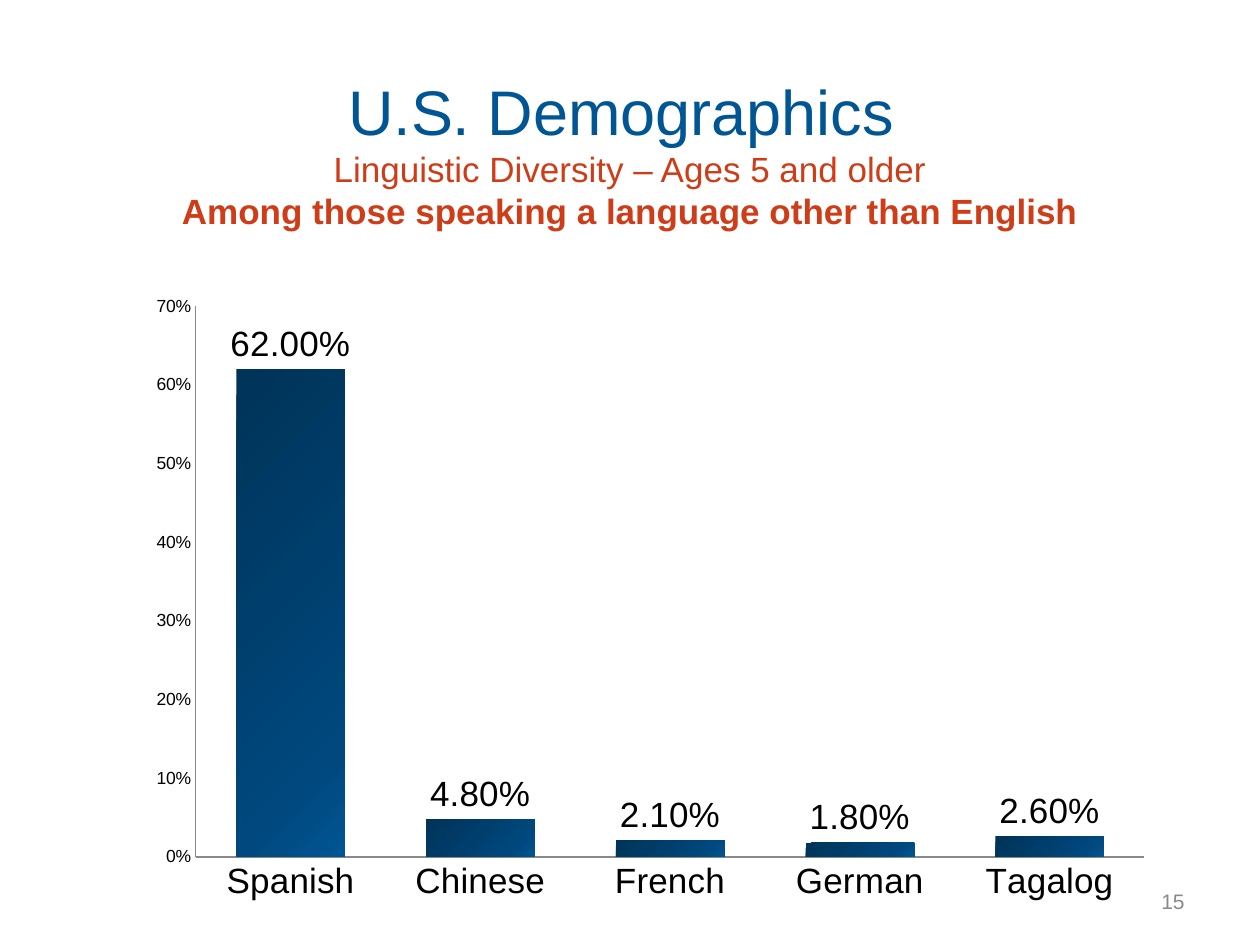
from copy import deepcopy

from pptx import Presentation
from pptx.chart.data import CategoryChartData
from pptx.dml.color import RGBColor
from pptx.enum.chart import XL_CHART_TYPE, XL_LABEL_POSITION, XL_TICK_MARK
from pptx.enum.text import MSO_ANCHOR, PP_ALIGN
from pptx.oxml.ns import qn
from pptx.util import Pt

COLUMN = XL_CHART_TYPE.COLUMN_CLUSTERED
ABOVE = XL_LABEL_POSITION.OUTSIDE_END
NO_TICK = XL_TICK_MARK.NONE
MIDDLE = MSO_ANCHOR.MIDDLE
CENTER, RIGHT = PP_ALIGN.CENTER, PP_ALIGN.RIGHT

BLACK = RGBColor(0x00, 0x00, 0x00)
BLUE = RGBColor(0x00, 0x56, 0x95)
MID = RGBColor(0x00, 0x48, 0x7E)
NAVY = RGBColor(0x00, 0x33, 0x58)
RED = RGBColor(0xCE, 0x3C, 0x18)
GRAY = RGBColor(0x89, 0x89, 0x89)

SCALE = 914400 / 126
SHADES = [(0, NAVY), (0.82, MID), (1, BLUE)]
SHARES = {
    "Spanish": 0.62,
    "Chinese": 0.048,
    "French": 0.021,
    "German": 0.018,
    "Tagalog": 0.026,
}


def emu(*lengths):
    return [round(n * SCALE) for n in lengths]


class Deck:
    face = "Arial"

    def __init__(self, width, height):
        self.show = Presentation()
        self.show.slide_width, self.show.slide_height = emu(width, height)
        self.slide = self.show.slides.add_slide(self.show.slide_layouts[6])

    def style(self, font, size, color, bold=False):
        font.name, font.size, font.bold = self.face, Pt(size), bold
        font.color.rgb = color

    def text(self, box, lines, align):
        """Each line is (words, size, color, bold)."""
        frame = self.slide.shapes.add_textbox(*emu(*box)).text_frame
        frame.word_wrap = True
        frame.vertical_anchor = MIDDLE
        para = frame.paragraphs[0]
        para.alignment = align
        for i, (words, *look) in enumerate(lines):
            if i:
                para.add_line_break()
            run = para.add_run()
            run.text = words
            self.style(run.font, *look)

    def shade(self, series, stops):
        """Fill with a gradient from top left to bottom right."""
        fill = series.format.fill
        fill.gradient()
        fill.gradient_angle = 315
        row = series._element.find(".//" + qn("a:gsLst"))
        while len(row) < len(stops):
            row.append(deepcopy(row[-1]))
        for stop, (place, color) in zip(fill.gradient_stops, stops):
            stop.position = place
            stop.color.rgb = color

    def axis(self, axis, size):
        axis.has_major_gridlines = False
        axis.major_tick_mark = axis.minor_tick_mark = NO_TICK
        axis.format.line.color.rgb = GRAY
        axis.format.line.width = Pt(0.75)
        self.style(axis.tick_labels.font, size, BLACK)

    def columns(self, box, shares):
        data = CategoryChartData(number_format="0.00%")
        data.categories = list(shares)
        data.add_series("Series 1", list(shares.values()))
        chart = self.slide.shapes.add_chart(COLUMN, *emu(*box), data).chart
        chart.has_legend = chart.has_title = False
        self.style(chart.font, 10, BLACK)
        self.axis(chart.category_axis, 20)
        self.axis(chart.value_axis, 10)
        scale = chart.value_axis
        scale.minimum_scale, scale.maximum_scale, scale.major_unit = 0, 0.7, 0.1
        scale.tick_labels.number_format = "0%"
        scale.tick_labels.number_format_is_linked = False
        plot = chart.plots[0]
        plot.gap_width = 75
        plot.vary_by_categories = False
        self.shade(plot.series[0], SHADES)
        labels = plot.series[0].data_labels
        labels.show_value = True
        labels.position = ABOVE
        labels.number_format = "0.00%"
        labels.number_format_is_linked = False
        self.style(labels.font, 20, BLACK)


def main():
    deck = Deck(1260, 945)
    title = [
        ("U.S. Demographics ", 36, BLUE),
        ("Linguistic Diversity – Ages 5 and older", 20, RED),
        ("Among those speaking a language other than English", 20, RED, True),
    ]
    deck.text((0, 73, 1260, 158), title, CENTER)
    deck.text((903, 876, 294, 50), [("15", 12, GRAY)], RIGHT)
    deck.columns((136, 284, 1029, 630), SHARES)
    deck.show.save("out.pptx")


if __name__ == "__main__":
    main()
